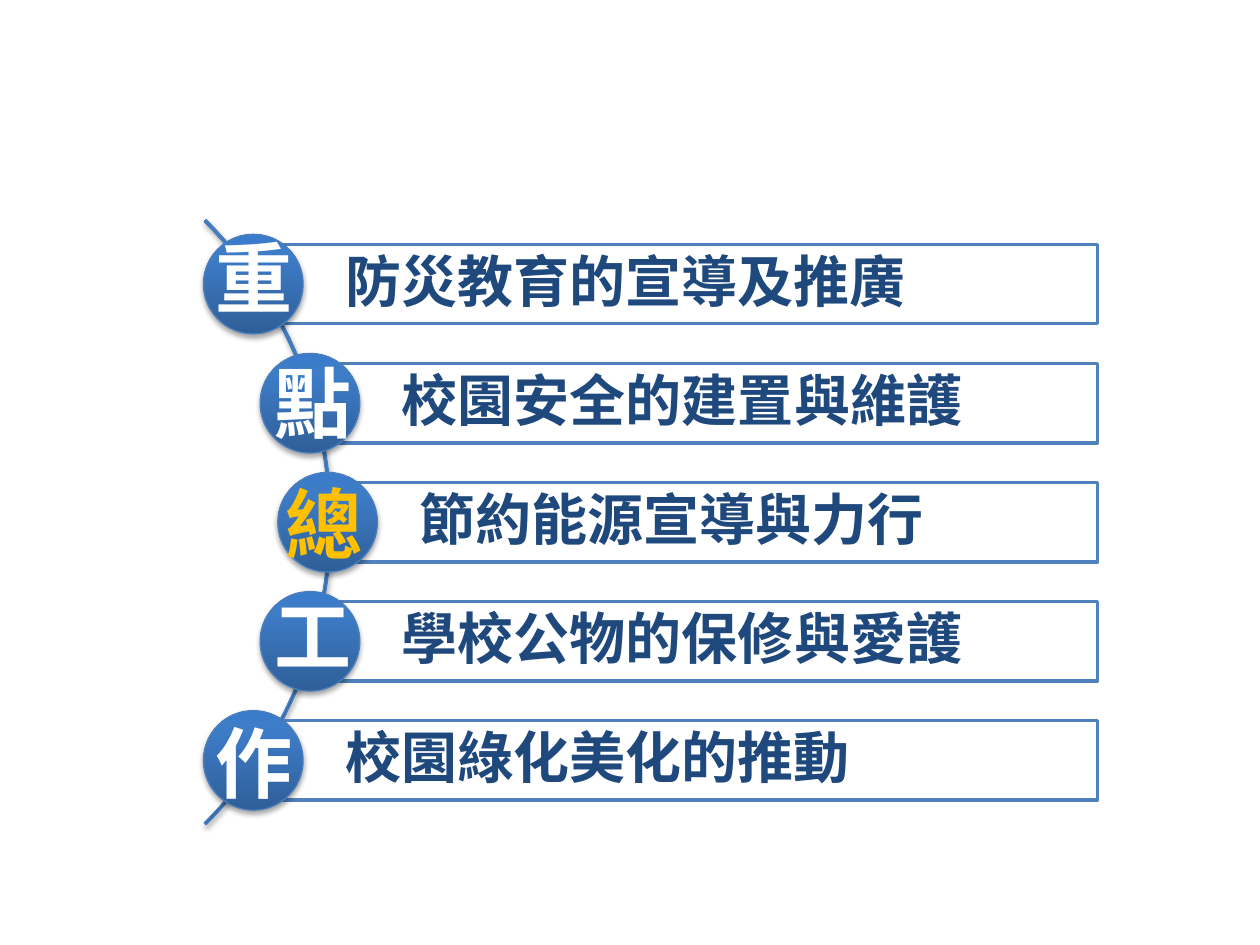
from lxml import etree
from pptx import Presentation
from pptx.dml.color import RGBColor
from pptx.enum.shapes import MSO_SHAPE
from pptx.enum.text import MSO_ANCHOR, PP_ALIGN
from pptx.oxml import parse_xml
from pptx.oxml.ns import nsdecls, qn
from pptx.util import Inches, Pt

ARC, BAR, CIRCLE = MSO_SHAPE.BLOCK_ARC, MSO_SHAPE.RECTANGLE, MSO_SHAPE.OVAL
MIDDLE, LEFT = MSO_ANCHOR.MIDDLE, PP_ALIGN.LEFT
BAR_FONT, LABEL_FONT = "Noto Sans CJK JP", "Noto Sans CJK SC"
GRADIENT = [(0, "2F5F99"), (80, "3D7CC7"), (100, "3A7CCB")]
BAR_RIGHT, BAR_HEIGHT = 8.71, 0.63
CIRCLE_SIZE = 0.79
FIRST_CENTER, ROW_PITCH = 2.255, 0.945
ROWS = [
    ("重", "FFFFFF", "防災教育的宣導及推廣", 2.01, (1.61, 1.78)),
    ("點", "FFFFFF", "校園安全的建置與維護", 2.46, (2.08, 2.77)),
    ("總", "FFC000", "節約能源宣導與力行", 2.6, (2.17, 3.73)),
    ("工", "FFFFFF", "學校公物的保修與愛護", 2.46, (2.08, 4.62)),
    ("作", "FFFFFF", "校園綠化美化的推動", 2.01, (1.61, 5.63)),
]


def color(value):
    """Return the colour for a hex string."""
    return RGBColor.from_string(value)


def add_box(slide, kind, left, top, width, height, line, line_width):
    """Add an outlined preset shape."""
    shape = slide.shapes.add_shape(
        kind, Inches(left), Inches(top), Inches(width), Inches(height))
    shape.shadow.inherit = False
    shape.line.color.rgb = color(line)
    shape.line.width = Pt(line_width)
    return shape


def add_glossy(slide, kind, left, top, size):
    """Add a square-boxed shape with a blue gradient and a soft shadow."""
    shape = add_box(slide, kind, left, top, size, size, "4B7EBC", 0.75)
    stops = "".join(
        f'<a:gs pos="{position * 1000}"><a:srgbClr val="{value}"/></a:gs>'
        for position, value in GRADIENT)
    properties = shape._element.spPr
    properties.find(qn("a:prstGeom")).addnext(parse_xml(
        f'<a:gradFill {nsdecls("a")} rotWithShape="1"><a:gsLst>{stops}</a:gsLst>'
        '<a:lin ang="16200000" scaled="0"/></a:gradFill>'))
    properties.find(qn("a:effectLst")).append(parse_xml(
        f'<a:outerShdw {nsdecls("a")} blurRad="{Pt(3.1)}" dist="{Pt(1.8)}" '
        'dir="5400000" rotWithShape="0"><a:srgbClr val="000000">'
        '<a:alpha val="35000"/></a:srgbClr></a:outerShdw>'))
    return shape


def write(shape, text, name, size, value):
    """Write one bold, left-aligned line of text."""
    paragraph = shape.text_frame.paragraphs[0]
    paragraph.text = text
    paragraph.alignment = LEFT
    font = paragraph.font
    font.name, font.size, font.bold = name, Pt(size), True
    font.color.rgb = color(value)
    etree.SubElement(font._element, qn("a:ea")).set("typeface", name)


def add_bar(slide, text, left, center):
    """Add a task bar that ends at the common right edge."""
    bar = add_box(slide, BAR, left, center - BAR_HEIGHT / 2,
                  BAR_RIGHT - left, BAR_HEIGHT, "4F81BD", 2)
    bar.fill.solid()
    bar.fill.fore_color.rgb = color("FFFFFF")
    frame = bar.text_frame
    frame.word_wrap = True
    frame.vertical_anchor = MIDDLE
    frame.margin_left = Inches(0.73)
    frame.margin_top = frame.margin_right = frame.margin_bottom = Inches(0.1)
    write(bar, text, BAR_FONT, 32, "1F497D")
    frame.paragraphs[0].line_spacing = 0.9


def add_label(slide, text, value, left, top):
    """Add the large character over a circle."""
    label = slide.shapes.add_textbox(
        Inches(left), Inches(top), Inches(0.94), Inches(0.84))
    label.text_frame.word_wrap = True
    write(label, text, LABEL_FONT, 44, value)


def add_task_list(slide):
    """Add the arc and the rows of bars, circles and characters along it."""
    arc = add_glossy(slide, ARC, -4.16, 0.75, 6.79)
    for index, adjustment in enumerate((189, 27, 0.00318)):
        arc.adjustments[index] = adjustment
    for index, (character, value, task, left, label_place) in enumerate(ROWS):
        center = FIRST_CENTER + index * ROW_PITCH
        add_bar(slide, task, left, center)
        add_glossy(slide, CIRCLE, left - CIRCLE_SIZE / 2,
                   center - CIRCLE_SIZE / 2, CIRCLE_SIZE)
        add_label(slide, character, value, *label_place)


def main():
    """Build and save the presentation."""
    presentation = Presentation()
    presentation.slide_width = Inches(10)
    presentation.slide_height = Inches(7.5)
    slide = presentation.slides.add_slide(presentation.slide_layouts[6])
    add_task_list(slide)
    presentation.save("out.pptx")


if __name__ == "__main__":
    main()
